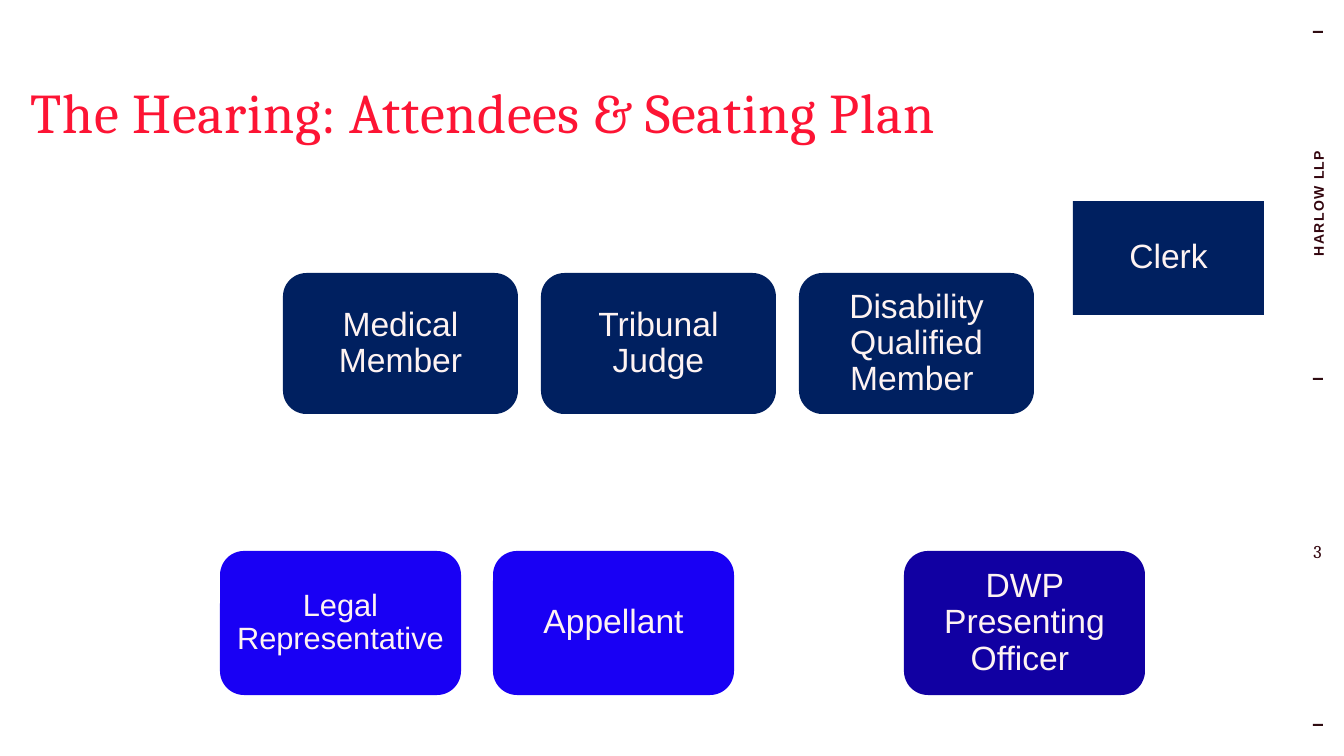
"""Build the hearing attendees and seating plan slide."""
import pptx
import pptx.util
import pptx.dml.color
import pptx.enum.shapes
import pptx.enum.text

RGB = pptx.dml.color.RGBColor
KIND = pptx.enum.shapes.MSO_SHAPE
ALIGN = pptx.enum.text.PP_ALIGN
ANCHOR = pptx.enum.text.MSO_ANCHOR

NAVY = RGB(0x00, 0x20, 0x60)
BLUE = RGB(0x19, 0x00, 0xF4)
INDIGO = RGB(0x11, 0x00, 0xA2)
CREAM = RGB(0xFE, 0xF3, 0xF2)
RED = RGB(0xFD, 0x14, 0x34)
DARK = RGB(0x32, 0x04, 0x0D)
TICK = RGB(0x2F, 0x0C, 0x12)

TITLE = "The Hearing: Attendees & Seating Plan"
FIRM = "HARLOW LLP"
PAGE = "3"
PANEL = ["Medical Member", "Tribunal Judge", "Disability Qualified Member "]
PARTIES = [
    ("Legal Representative", 220, BLUE, 22, 9),
    ("Appellant", 493, BLUE, 24, 10),
    ("DWP Presenting Officer ", 904, INDIGO, 24, 10),
]
TICKS = [31, 378, 724]
SCALE = 914400 / 100.8


def px(num):
    return pptx.util.Emu(round(num * SCALE))


def write(item, text, size, face, color, align=ALIGN.CENTER,
          anchor=ANCHOR.MIDDLE, inset=0, line=1.0, space=0, bold=False):
    frame = item.text_frame
    frame.word_wrap = True
    frame.vertical_anchor = anchor
    frame.margin_left = frame.margin_right = px(inset)
    frame.margin_top = frame.margin_bottom = px(inset)
    para = frame.paragraphs[0]
    para.alignment = align
    para.line_spacing = line
    run = para.add_run()
    run.text = text
    run.font.size = pptx.util.Pt(size)
    run.font.name = face
    run.font.bold = bold
    run.font.color.rgb = color
    if space:
        run._r.get_or_add_rPr().set("spc", str(space))


def block(slide, kind, box, color):
    item = slide.shapes.add_shape(kind, *map(px, box))
    item.shadow.inherit = False
    item.fill.solid()
    item.fill.fore_color.rgb = color
    item.line.fill.background()
    return item


def label(slide, box, *args, **style):
    item = slide.shapes.add_textbox(*map(px, box))
    write(item, *args, **style)
    return item


def seat(slide, text, box, color, size=24, inset=10, kind=KIND.ROUNDED_RECTANGLE):
    item = block(slide, kind, box, color)
    write(item, text, size, "Arial", CREAM, inset=inset, line=0.9)


def main():
    deck = pptx.Presentation()
    deck.slide_width, deck.slide_height = px(1344), px(756)
    slide = deck.slides.add_slide(deck.slide_layouts[6])

    for top in TICKS:
        block(slide, KIND.RECTANGLE, (1313, top, 10, 2), TICK)
    label(slide, (1302, 531, 31, 40), PAGE, 12.9, "Cambria", DARK)
    firm = label(slide, (1152, 188, 347, 31), FIRM, 10, "Arial", DARK,
                 anchor=ANCHOR.TOP, space=100, bold=True)
    firm.rotation = 270
    label(slide, (31, 31, 1215, 115), TITLE, 40, "Cambria", RED,
          align=ALIGN.LEFT, anchor=ANCHOR.BOTTOM, line=0.9, space=50)

    for col, text in enumerate(PANEL):
        seat(slide, text, (283 + 258 * col, 273, 235, 141), NAVY)
    for text, left, color, size, inset in PARTIES:
        seat(slide, text, (left, 551, 241, 144), color, size, inset)
    seat(slide, "Clerk", (1073, 201, 191, 114), NAVY, kind=KIND.RECTANGLE)

    deck.save("out.pptx")


if __name__ == "__main__":
    main()
